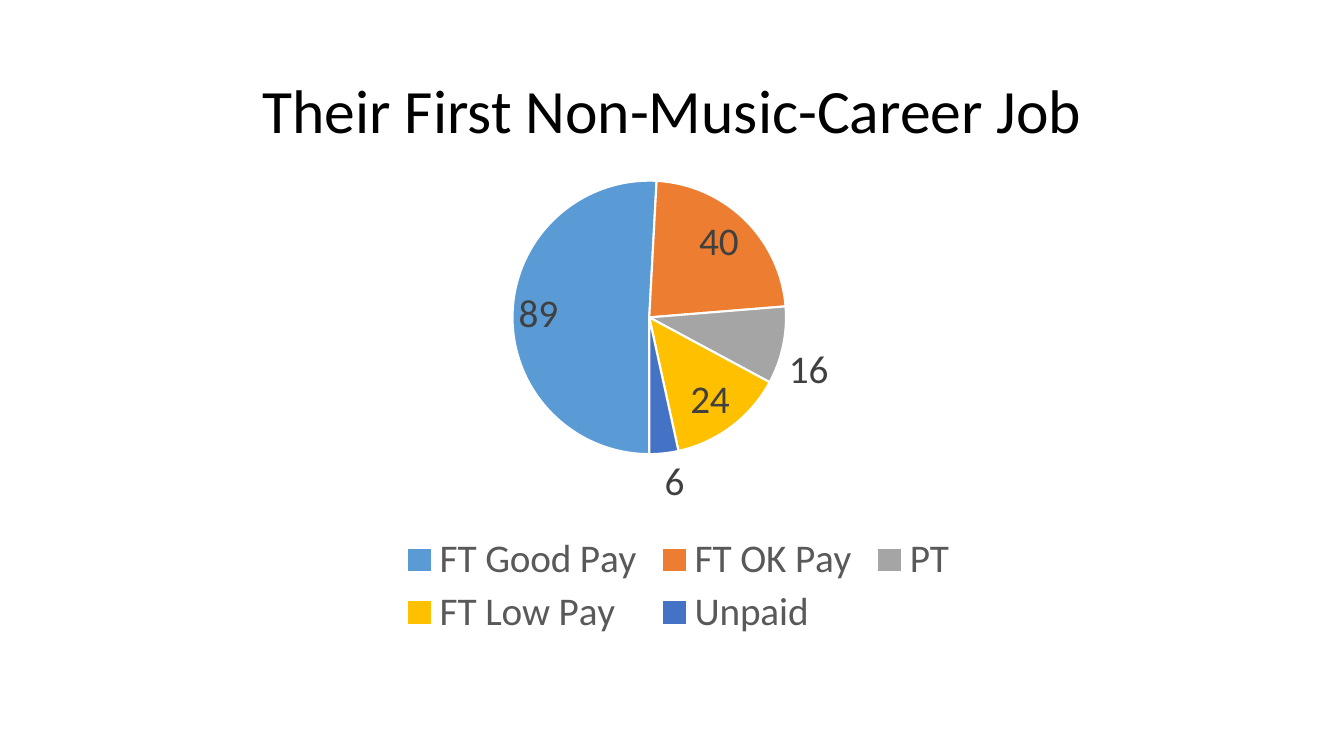
from lxml import etree
from pptx import Presentation
from pptx.chart.data import CategoryChartData
from pptx.dml.color import RGBColor
from pptx.enum.chart import XL_CHART_TYPE, XL_LABEL_POSITION, XL_LEGEND_POSITION
from pptx.enum.text import MSO_ANCHOR, PP_ALIGN
from pptx.oxml.ns import qn
from pptx.util import Inches, Pt

PIE = XL_CHART_TYPE.PIE
FIT = XL_LABEL_POSITION.BEST_FIT
BOTTOM = XL_LEGEND_POSITION.BOTTOM
MIDDLE = MSO_ANCHOR.MIDDLE
CENTER = PP_ALIGN.CENTER

FACE = "Calibri"
COLORS = {
    "title": "000000",
    "label": "404040",
    "legend": "595959",
    "edge": "FFFFFF",
    "FT Good Pay": "5B9BD5",
    "FT OK Pay": "ED7D31",
    "PT": "A5A5A5",
    "FT Low Pay": "FFC000",
    "Unpaid": "4472C4",
}
JOBS = {"FT Good Pay": 89, "FT OK Pay": 40, "PT": 16, "FT Low Pay": 24, "Unpaid": 6}


def tint(name):
    return RGBColor.from_string(COLORS[name])


def style(font, size, name):
    font.name = FACE
    font.size = Pt(size)
    font.color.rgb = tint(name)


def place(node, index, inner, x, y, w, h):
    for old in node.findall(qn("c:layout")):
        node.remove(old)
    layout = etree.Element(qn("c:layout"))
    manual = etree.SubElement(layout, qn("c:manualLayout"))
    parts = {"xMode": "edge", "yMode": "edge", "x": x, "y": y, "w": w, "h": h}
    if inner:
        parts = {"layoutTarget": "inner", **parts}
    for tag, val in parts.items():
        etree.SubElement(manual, qn("c:" + tag)).set("val", str(val))
    node.insert(index, layout)


def add_title(slide, left, top, width, height):
    box = slide.shapes.add_textbox(Inches(left), Inches(top), Inches(width), Inches(height))
    frame = box.text_frame
    frame.word_wrap = True
    frame.vertical_anchor = MIDDLE
    frame.text = "Their First Non-Music-Career Job"
    para = frame.paragraphs[0]
    para.alignment = CENTER
    para.line_spacing = 0.9
    style(para.runs[0].font, 44, "title")


def add_pie(slide, left, top, width, height):
    data = CategoryChartData()
    data.categories = list(JOBS)
    data.add_series("Series 1", list(JOBS.values()))
    chart = slide.shapes.add_chart(
        PIE, Inches(left), Inches(top), Inches(width), Inches(height), data
    ).chart
    style(chart.font, 10, "title")
    chart.has_title = False

    plot = chart.plots[0]
    plot.vary_by_categories = True
    series = plot.series[0]
    for i, job in enumerate(JOBS):
        form = series.points[i].format
        form.fill.solid()
        form.fill.fore_color.rgb = tint(job)
        form.line.color.rgb = tint("edge")
        form.line.width = Pt(1.5)
    labels = series.data_labels
    labels.show_value = True
    labels.position = FIT
    style(labels.font, 28, "label")

    pie = series._element.getparent()
    for old in pie.findall(qn("c:firstSliceAng")):
        pie.remove(old)
    etree.SubElement(pie, qn("c:firstSliceAng")).set("val", "180")
    place(pie.getparent(), 0, True, 0.36, 0.03, 0.24, 0.57)

    chart.has_legend = True
    legend = chart.legend
    legend.position = BOTTOM
    legend.include_in_layout = False
    style(legend.font, 28, "legend")
    place(legend._element, 1, False, 0.26, 0.76, 0.49, 0.23)


def main():
    deck = Presentation()
    deck.slide_width = Inches(13.33)
    deck.slide_height = Inches(7.5)
    slide = deck.slides.add_slide(deck.slide_layouts[6])
    add_title(slide, 0.92, 0.4, 11.5, 1.45)
    add_pie(slide, 0.92, 1.65, 11.5, 4.76)
    deck.save("out.pptx")


if __name__ == "__main__":
    main()
